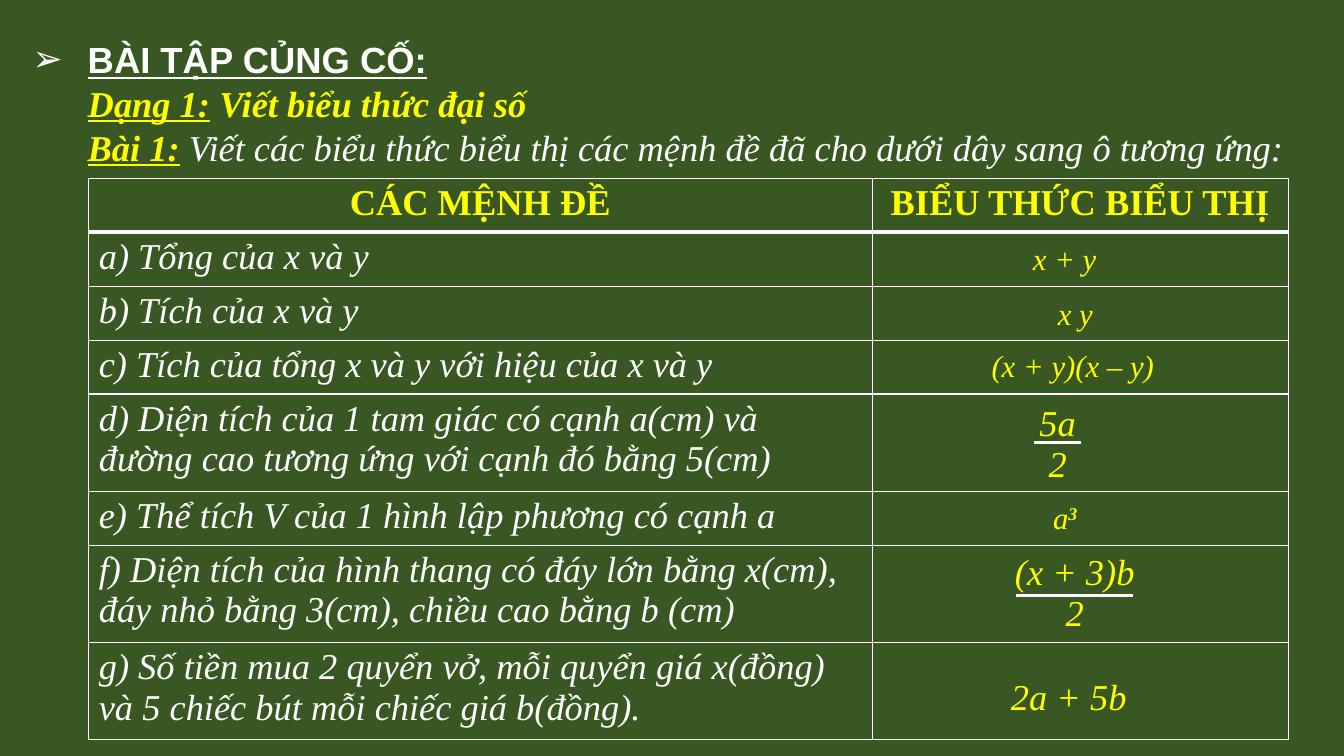
from lxml import etree
from pptx import Presentation
from pptx.dml.color import RGBColor
from pptx.enum.shapes import MSO_CONNECTOR, MSO_SHAPE
from pptx.enum.text import MSO_ANCHOR, MSO_AUTO_SIZE, PP_ALIGN
from pptx.oxml.ns import qn
from pptx.util import Inches, Pt

GREEN = RGBColor(0x38, 0x57, 0x23)
WHITE = RGBColor(0xFF, 0xFF, 0xFF)
YELLOW = RGBColor(0xFF, 0xFF, 0x00)
SERIF, SANS = "Times New Roman", "Arial"
LEFT, CENTER = PP_ALIGN.LEFT, PP_ALIGN.CENTER
TOP, MIDDLE = MSO_ANCHOR.TOP, MSO_ANCHOR.MIDDLE
NO_FIT = MSO_AUTO_SIZE.NONE
RECTANGLE = MSO_SHAPE.RECTANGLE
STRAIGHT = MSO_CONNECTOR.STRAIGHT

LABEL = dict(color=YELLOW, bold=True, italic=True, underline=True)
HEADING = [
    [("BÀI TẬP CỦNG CỐ:", dict(font=SANS, bold=True, underline=True))],
    [("Dạng 1:", LABEL),
     (" Viết biểu thức đại số", dict(color=YELLOW, bold=True, italic=True))],
    [("Bài 1:", LABEL),
     (" Viết các biểu thức biểu thị các mệnh đề đã cho dưới dây sang ô tương ứng:",
      dict(italic=True))],
]
HEADERS = ["CÁC MỆNH ĐỀ", "BIỂU THỨC BIỂU THỊ"]
STATEMENTS = [
    ("a) Tổng của x và y", 1),
    ("b) Tích của x và y", 1),
    ("c) Tích của tổng x và y với hiệu của x và y", 1),
    ("d) Diện tích của 1 tam giác có cạnh a(cm) và đường cao tương ứng với cạnh đó bằng 5(cm)", 2),
    ("e) Thể tích V của 1 hình lập phương có cạnh a", 1),
    ("f) Diện tích của hình thang có đáy lớn bằng x(cm), đáy nhỏ bằng 3(cm), chiều cao bằng b (cm)", 2),
    ("g) Số tiền mua 2 quyển vở, mỗi quyển giá x(đồng) và 5 chiếc bút mỗi chiếc giá b(đồng).", 2),
]
ROW_HEIGHTS = {1: 0.535, 2: 0.965}
COLUMN_WIDTHS = [7.77, 4.13]
PLATES = [
    ("x + y", "", 8.66, 2.33, 3.8),
    ("x y", "", 8.66, 2.87, 4.01),
    ("(x + y)(x – y)", "", 8.69, 3.39, 3.9),
    ("a", "3", 8.68, 4.9, 3.77),
]
FRACTIONS = [
    ("5a", "2", 10.49, 3.92, 4.39, 0.46),
    ("(x + 3)b", "2", 10.66, 5.4, 5.91, 1.16),
]


def add_span(para, text, size=26, font=SERIF, color=WHITE,
             bold=False, italic=False, underline=False):
    span = para.add_run()
    span.text = text
    span.font.name, span.font.size = font, Pt(size)
    span.font.color.rgb = color
    span.font.bold, span.font.italic, span.font.underline = bold, italic, underline
    return span


def add_math_box(page, text, center, top, width=1.6):
    box = page.shapes.add_textbox(
        Inches(center - width / 2), Inches(top), Inches(width), Inches(0.54))
    box.text_frame.word_wrap = True
    para = box.text_frame.paragraphs[0]
    para.alignment = CENTER
    add_span(para, text, color=YELLOW, italic=True)
    return para


def add_heading(page):
    title = page.shapes.title
    title.left, title.top = Inches(0.22), Inches(0.32)
    title.width, title.height = Inches(13), Inches(1.41)
    frame = title.text_frame
    frame.word_wrap, frame.auto_size, frame.vertical_anchor = True, NO_FIT, TOP
    for index, spans in enumerate(HEADING):
        para = frame.paragraphs[0] if index == 0 else frame.add_paragraph()
        para.alignment, para.line_spacing = LEFT, 1.0
        props = para._p.get_or_add_pPr()
        props.set("marL", str(Inches(0.55)))
        props.set("indent", str(Inches(0 if index else -0.55)))
        if index == 0:
            etree.SubElement(props, qn("a:buFont")).set("typeface", SANS)
            etree.SubElement(props, qn("a:buChar")).set("char", "➢")
        else:
            etree.SubElement(props, qn("a:buNone"))
        for text, style in spans:
            add_span(para, text, **style)


def set_borders(cell, row):
    props = cell._tc.get_or_add_tcPr()
    widths = {"lnL": 1, "lnR": 1,
              "lnT": 3 if row == 1 else 1, "lnB": 3 if row == 0 else 1}
    for tag, width in widths.items():
        line = etree.SubElement(props, qn("a:" + tag), w=str(Pt(width)))
        fill = etree.SubElement(line, qn("a:solidFill"))
        etree.SubElement(fill, qn("a:srgbClr"), val=str(WHITE))


def add_statement_table(page):
    rows = [(HEADERS, 1)] + [([text, ""], lines) for text, lines in STATEMENTS]
    heights = [ROW_HEIGHTS[lines] for _, lines in rows]
    table = page.shapes.add_table(
        len(rows), 2, Inches(0.88), Inches(1.77),
        Inches(sum(COLUMN_WIDTHS)), Inches(sum(heights))).table
    for column, width in zip(table.columns, COLUMN_WIDTHS):
        column.width = Inches(width)
    for row, (texts, _) in enumerate(rows):
        table.rows[row].height = Inches(heights[row])
        for column, text in enumerate(texts):
            cell = table.cell(row, column)
            set_borders(cell, row)
            cell.fill.solid()
            cell.fill.fore_color.rgb = GREEN
            para = cell.text_frame.paragraphs[0]
            if row == 0:
                para.alignment = CENTER
                add_span(para, text, color=YELLOW, bold=True)
            elif text:
                add_span(para, text, italic=True)


def add_plate(page, text, power, left, top, width):
    plate = page.shapes.add_shape(
        RECTANGLE, Inches(left), Inches(top), Inches(width), Inches(0.47))
    plate.shadow.inherit = False
    plate.fill.solid()
    plate.fill.fore_color.rgb = GREEN
    plate.line.color.rgb = GREEN
    plate.line.width = Pt(0.75)
    plate.text_frame.vertical_anchor = MIDDLE
    para = plate.text_frame.paragraphs[0]
    para.alignment = CENTER
    add_span(para, text, size=22, color=YELLOW, italic=True)
    if power:
        span = add_span(para, power, size=22, color=YELLOW, bold=True, italic=True)
        span._r.get_or_add_rPr().set("baseline", "30000")


def add_fraction(page, numerator, denominator, center, top, bar_top, bar_width):
    add_math_box(page, numerator, center, top)
    add_math_box(page, denominator, center, top + 0.41)
    bar = page.shapes.add_connector(
        STRAIGHT, Inches(center - bar_width / 2), Inches(bar_top),
        Inches(center + bar_width / 2), Inches(bar_top))
    bar.line.color.rgb = WHITE
    bar.line.width = Pt(2.25)
    etree.SubElement(bar._element.spPr, qn("a:effectLst"))


def main():
    deck = Presentation()
    deck.slide_width, deck.slide_height = Inches(13.33), Inches(7.5)
    page = deck.slides.add_slide(deck.slide_layouts[5])
    page.background.fill.solid()
    page.background.fill.fore_color.rgb = GREEN
    add_heading(page)
    add_statement_table(page)
    for plate in PLATES:
        add_plate(page, *plate)
    for fraction in FRACTIONS:
        add_fraction(page, *fraction)
    total = add_math_box(page, "2a + 5b", 10.6, 6.57, 3.28)
    total.line_spacing = 1.15
    deck.save("out.pptx")


if __name__ == "__main__":
    main()
